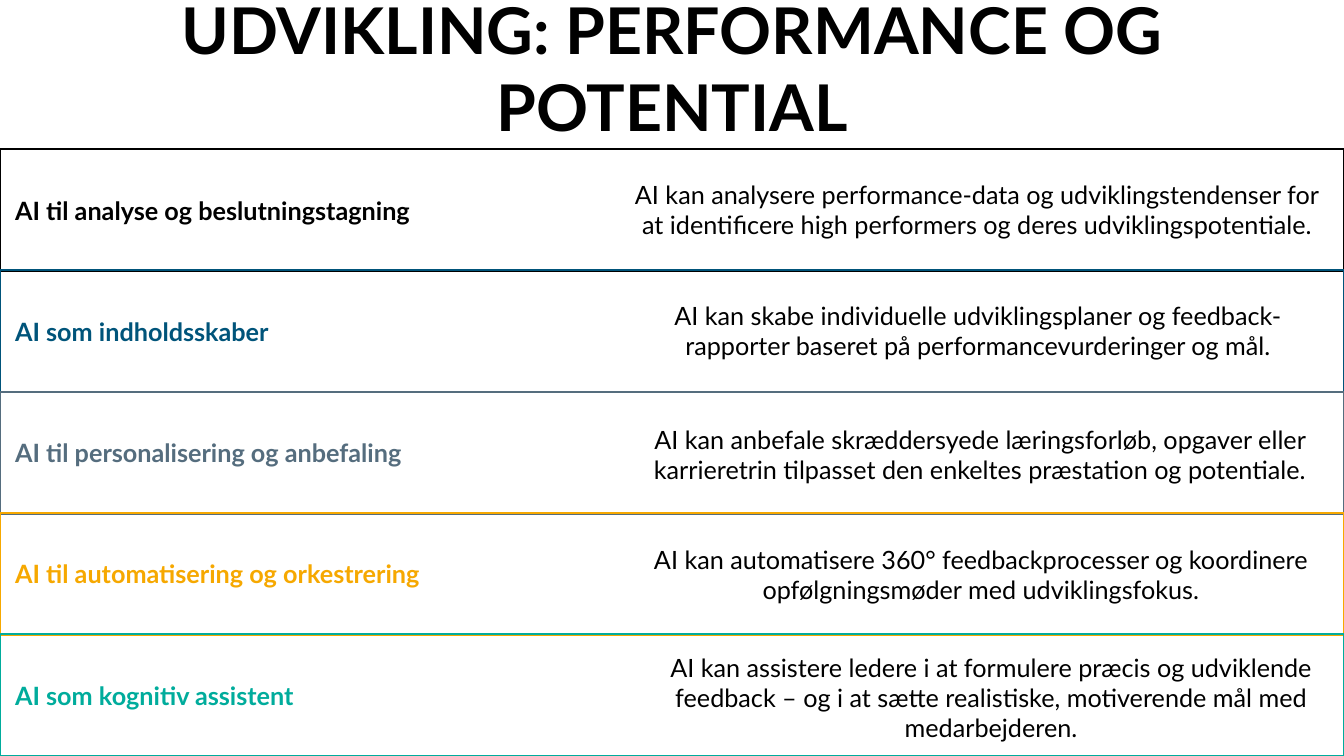
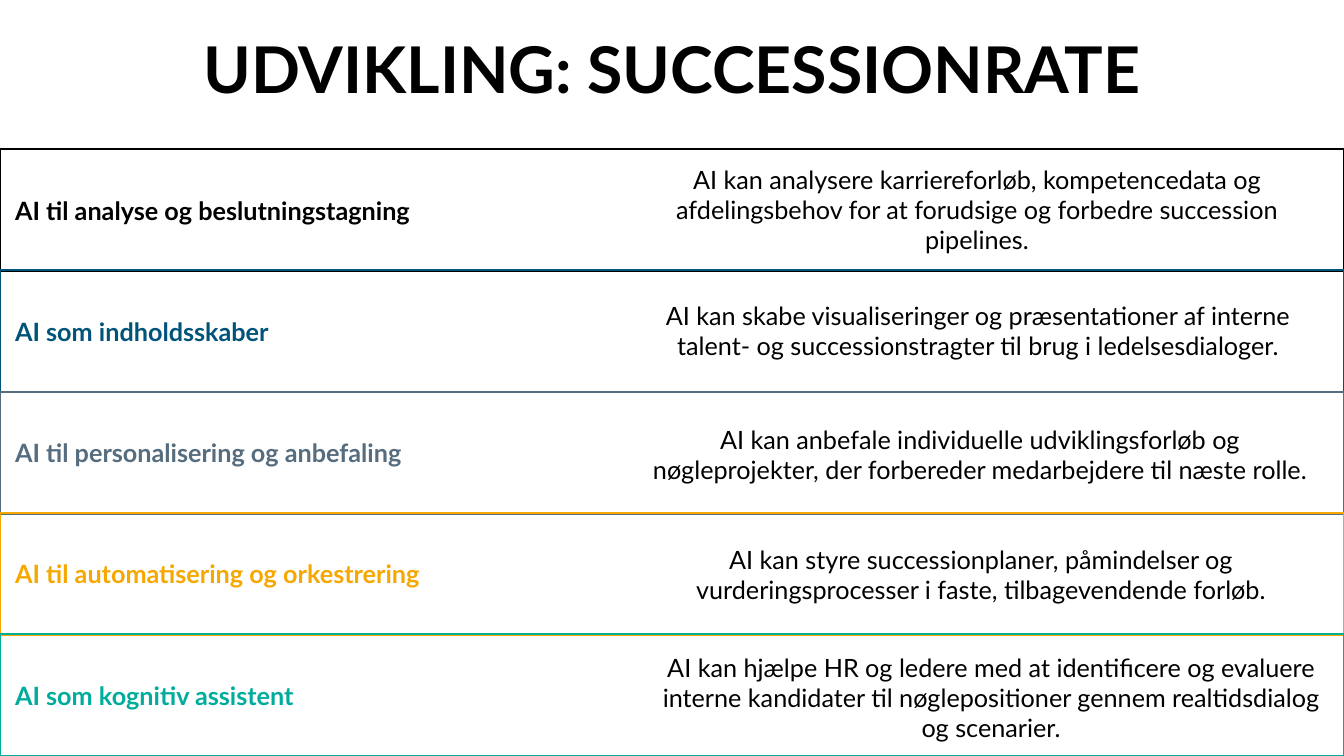
from pptx import Presentation
from pptx.dml.color import RGBColor
from pptx.enum.shapes import MSO_SHAPE
from pptx.enum.text import MSO_ANCHOR, PP_ALIGN
from pptx.util import Inches, Pt

FONT = "Lato"
BLACK = "000000"
SLIDE_WIDTH, SLIDE_HEIGHT = 13.33, 7.5
TITLE_HEIGHT = 1.34
BANDS_TOP, BAND_HEIGHT = 1.48, 1.21
ANSWER_WIDTH, ANSWER_HEIGHT = 7, 1.2

TITLE_STYLE = {"size": Pt(46), "bold": True}
LABEL_STYLE = {"size": Pt(18), "bold": True}
ANSWER_STYLE = {"size": Pt(18), "bold": False}

ROLES = [
    ("AI til analyse og beslutningstagning", BLACK),
    ("AI som indholdsskaber", "00547A"),
    ("AI til personalisering og anbefaling", "556D7E"),
    ("AI til automatisering og orkestrering", "F6A800"),
    ("AI som kognitiv assistent", "00AC9C"),
]
ANSWER_PLACES = [(6.19, 1.48), (6.2, 2.68), (6.22, 3.91), (6.23, 5.1), (6.33, 6.32)]

TOPICS = [
    ("UDVIKLING: PERFORMANCE OG POTENTIAL", [
        "AI kan analysere performance-data og udviklingstendenser for at identificere high performers og deres udviklingspotentiale.",
        "AI kan skabe individuelle udviklingsplaner og feedback-rapporter baseret på performancevurderinger og mål.",
        "AI kan anbefale skræddersyede læringsforløb, opgaver eller karrieretrin tilpasset den enkeltes præstation og potentiale.",
        "AI kan automatisere 360° feedbackprocesser og koordinere opfølgningsmøder med udviklingsfokus.",
        "AI kan assistere ledere i at formulere præcis og udviklende feedback – og i at sætte realistiske, motiverende mål med medarbejderen.",
    ]),
    ("UDVIKLING: SUCCESSIONRATE", [
        "AI kan analysere karriereforløb, kompetencedata og afdelingsbehov for at forudsige og forbedre succession pipelines.",
        "AI kan skabe visualiseringer og præsentationer af interne talent- og successionstragter til brug i ledelsesdialoger.",
        "AI kan anbefale individuelle udviklingsforløb og nøgleprojekter, der forbereder medarbejdere til næste rolle.",
        "AI kan styre successionplaner, påmindelser og vurderingsprocesser i faste, tilbagevendende forløb.",
        "AI kan hjælpe HR og ledere med at identificere og evaluere interne kandidater til nøglepositioner gennem realtidsdialog og scenarier.",
    ]),
]


def color(value):
    return RGBColor.from_string(value)


def write(holder, text, style, ink=BLACK, align=PP_ALIGN.CENTER):
    frame = holder.text_frame
    frame.word_wrap = True
    frame.vertical_anchor = MSO_ANCHOR.MIDDLE
    paragraph = frame.paragraphs[0]
    paragraph.alignment = align
    run = paragraph.add_run()
    run.text = text
    for name, value in {"name": FONT, **style}.items():
        setattr(run.font, name, value)
    run.font.color.rgb = color(ink)


def add_text(slide, place, text, style):
    write(slide.shapes.add_textbox(*map(Inches, place)), text, style)


def add_band(slide, top, label, ink):
    band = slide.shapes.add_shape(
        MSO_SHAPE.RECTANGLE, 0, Inches(top), Inches(SLIDE_WIDTH), Inches(BAND_HEIGHT))
    band.shadow.inherit = False
    band.fill.background()
    band.line.color.rgb = color(ink)
    band.line.width = Pt(1.5)
    band.text_frame.margin_left = Inches(0.15)
    write(band, label, LABEL_STYLE, ink, PP_ALIGN.LEFT)


def add_topic(deck, title, answers):
    slide = deck.slides.add_slide(deck.slide_layouts[6])
    pitch = (SLIDE_HEIGHT - BAND_HEIGHT - BANDS_TOP) / (len(ROLES) - 1)
    for row, (label, ink) in enumerate(ROLES):
        add_band(slide, BANDS_TOP + row * pitch, label, ink)
    add_text(slide, (0, 0, SLIDE_WIDTH, TITLE_HEIGHT), title, TITLE_STYLE)
    for place, answer in zip(ANSWER_PLACES, answers):
        add_text(slide, (*place, ANSWER_WIDTH, ANSWER_HEIGHT), answer, ANSWER_STYLE)


def main():
    deck = Presentation()
    deck.slide_width, deck.slide_height = Inches(SLIDE_WIDTH), Inches(SLIDE_HEIGHT)
    for title, answers in TOPICS:
        add_topic(deck, title, answers)
    deck.save("out.pptx")


if __name__ == "__main__":
    main()
